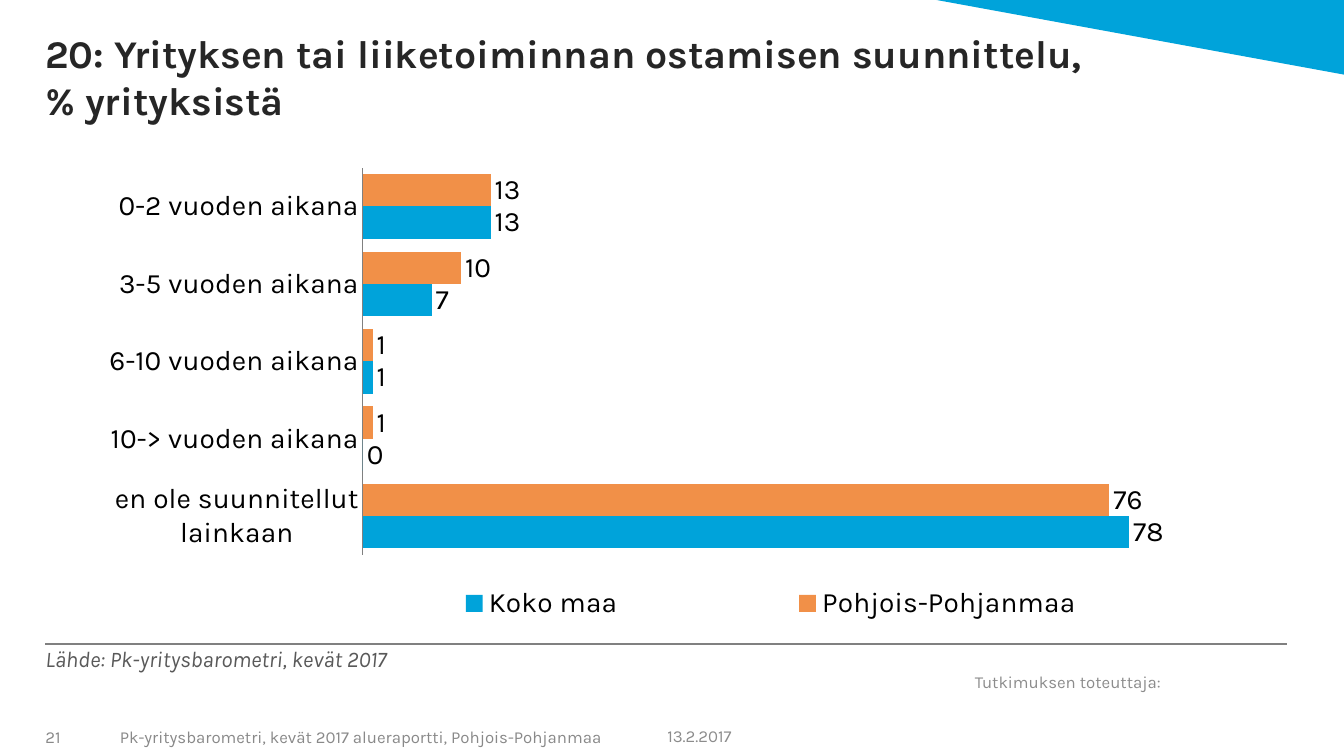
from lxml import etree
from pptx import Presentation
from pptx.chart.data import CategoryChartData
from pptx.dml.color import RGBColor
from pptx.enum.chart import XL_CHART_TYPE as ChartType, XL_LABEL_POSITION as LabelPosition
from pptx.enum.chart import XL_LEGEND_POSITION as LegendPosition, XL_TICK_MARK as TickMark
from pptx.enum.shapes import MSO_CONNECTOR as Connector, MSO_SHAPE as Shape
from pptx.enum.text import MSO_ANCHOR as Anchor
from pptx.oxml import parse_xml
from pptx.oxml.ns import nsdecls, qn
from pptx.util import Inches, Pt

FONT = "Karla"
BLUE, ORANGE = "00A3DA", "F19048"
LEFT, WIDTH = 0.45, 12.3
PLAIN, INSET = (0, 0, 0, 0), (0.1, 0.05, 0.1, 0.05)

# text, (left, top, width, height), size, colour, anchor, insets, bold, italic
TEXTS = [
    ("20: Yrityksen tai liiketoiminnan ostamisen suunnittelu,\v% yrityksistä",
     (LEFT, 0, WIDTH, 1.22), 28, "262626", Anchor.BOTTOM, PLAIN, True, False),
    ("Lähde: Pk-yritysbarometri, kevät 2017",
     (LEFT, 6.4, 10.62, 0.43), 16, "595959", Anchor.TOP, PLAIN, False, True),
    ("Tutkimuksen toteuttaja:",
     (9.57, 6.56, 2.18, 0.41), 12, "8C8C8C", Anchor.MIDDLE, INSET, False, False),
    ("21", (LEFT, 7.13, 0.63, 0.35), 12, "898989", Anchor.MIDDLE,
     (0, 0.05, 0.1, 0.05), False, False),
    ("Pk-yritysbarometri, kevät 2017 alueraportti, Pohjois-Pohjanmaa",
     (1.09, 7.13, 5.41, 0.35), 12, "898989", Anchor.MIDDLE, INSET, False, False),
    ("13.2.2017", (6.52, 7.12, 1.33, 0.35), 12, "8C8C8C", Anchor.MIDDLE, INSET, False, False),
]

CATEGORIES = ["0-2 vuoden aikana", "3-5 vuoden aikana", "6-10 vuoden aikana",
              "10-> vuoden aikana", "en ole suunnitellut lainkaan"]
SERIES = [("Pohjois-Pohjanmaa", ORANGE, (13, 10, 1, 1, 76)),
          ("Koko maa", BLUE, (13, 7, 1, 0, 78))]
PLOT_LAYOUT = (0.256, 0.024, 0.713, 0.814)
LEGEND_LAYOUT = (0.2, 0.88, 0.77, 0.12)


def color(hex_color):
    return RGBColor.from_string(hex_color)


def add_text(slide, text, box, size, text_color, anchor, insets, bold, italic):
    frame = slide.shapes.add_textbox(*map(Inches, box)).text_frame
    frame.word_wrap = True
    frame.vertical_anchor = anchor
    (frame.margin_left, frame.margin_top,
     frame.margin_right, frame.margin_bottom) = map(Inches, insets)
    paragraph = frame.paragraphs[0]
    paragraph.text = text
    font = paragraph.font
    font.name, font.size, font.bold, font.italic = FONT, Pt(size), bold, italic
    font.color.rgb = color(text_color)


def manual_layout(box, inner=False):
    """Return a c:layout element placed by fractions of the chart area."""
    target = '<c:layoutTarget val="inner"/>' if inner else ""
    modes = "".join(f'<c:{key}Mode val="edge"/>' for key in "xy")
    sizes = "".join(f'<c:{key} val="{value}"/>' for key, value in zip("xywh", box))
    return parse_xml(f"<c:layout {nsdecls('c')}><c:manualLayout>{target}{modes}{sizes}"
                     "</c:manualLayout></c:layout>")


def add_bar_chart(slide):
    data = CategoryChartData()
    data.categories = CATEGORIES
    for name, _, values in SERIES:
        data.add_series(name, values)
    box = map(Inches, (LEFT, 1.55, WIDTH, 4.72))
    chart = slide.shapes.add_chart(ChartType.BAR_CLUSTERED, *box, data).chart
    chart.has_title = False
    chart.font.name, chart.font.size = FONT, Pt(20)
    chart.font.color.rgb = color("000000")

    plot = chart.plots[0]
    plot.gap_width, plot.overlap, plot.vary_by_categories = 40, 0, False
    for series, (_, fill, _) in zip(plot.series, SERIES):
        series.format.fill.solid()
        series.format.fill.fore_color.rgb = color(fill)
        labels = series.data_labels
        labels.show_value = True
        labels.position = LabelPosition.OUTSIDE_END
        labels.number_format, labels.number_format_is_linked = "#,##0", False

    category_axis, value_axis = chart.category_axis, chart.value_axis
    category_axis.reverse_order = True
    category_axis.major_tick_mark = category_axis.minor_tick_mark = TickMark.NONE
    category_axis.format.line.color.rgb = color("808080")
    value_axis.minimum_scale, value_axis.maximum_scale = 0, 90
    value_axis.has_major_gridlines = False
    value_axis.visible = False

    chart.has_legend = True
    legend = chart.legend
    legend.position, legend.include_in_layout = LegendPosition.RIGHT, False
    plot_area = chart.element.find(".//" + qn("c:plotArea"))
    legend_element = chart.element.find(".//" + qn("c:legend"))
    for parent in (plot_area, legend_element):
        for layout in parent.findall(qn("c:layout")):
            parent.remove(layout)
    plot_area.insert(0, manual_layout(PLOT_LAYOUT, inner=True))
    legend_element.find(qn("c:legendPos")).addnext(manual_layout(LEGEND_LAYOUT))


def main():
    presentation = Presentation()
    presentation.slide_width, presentation.slide_height = Inches(13.33), Inches(7.5)
    slide = presentation.slides.add_slide(presentation.slide_layouts[6])

    corner = slide.shapes.add_shape(Shape.RIGHT_TRIANGLE,
                                    *map(Inches, (9.29, 0, 4.04, 0.74)))
    corner.rotation = 180
    corner.shadow.inherit = False
    corner.fill.solid()
    corner.fill.fore_color.rgb = color(BLUE)
    corner.line.fill.background()

    rule = slide.shapes.add_connector(Connector.STRAIGHT,
                                      *map(Inches, (LEFT, 6.39, 12.76, 6.39)))
    rule.line.color.rgb = color("808080")
    rule.line.width = Pt(1.5)
    etree.SubElement(rule.element.spPr, qn("a:effectLst"))

    add_bar_chart(slide)
    for text in TEXTS:
        add_text(slide, *text)
    presentation.save("out.pptx")


if __name__ == "__main__":
    main()
